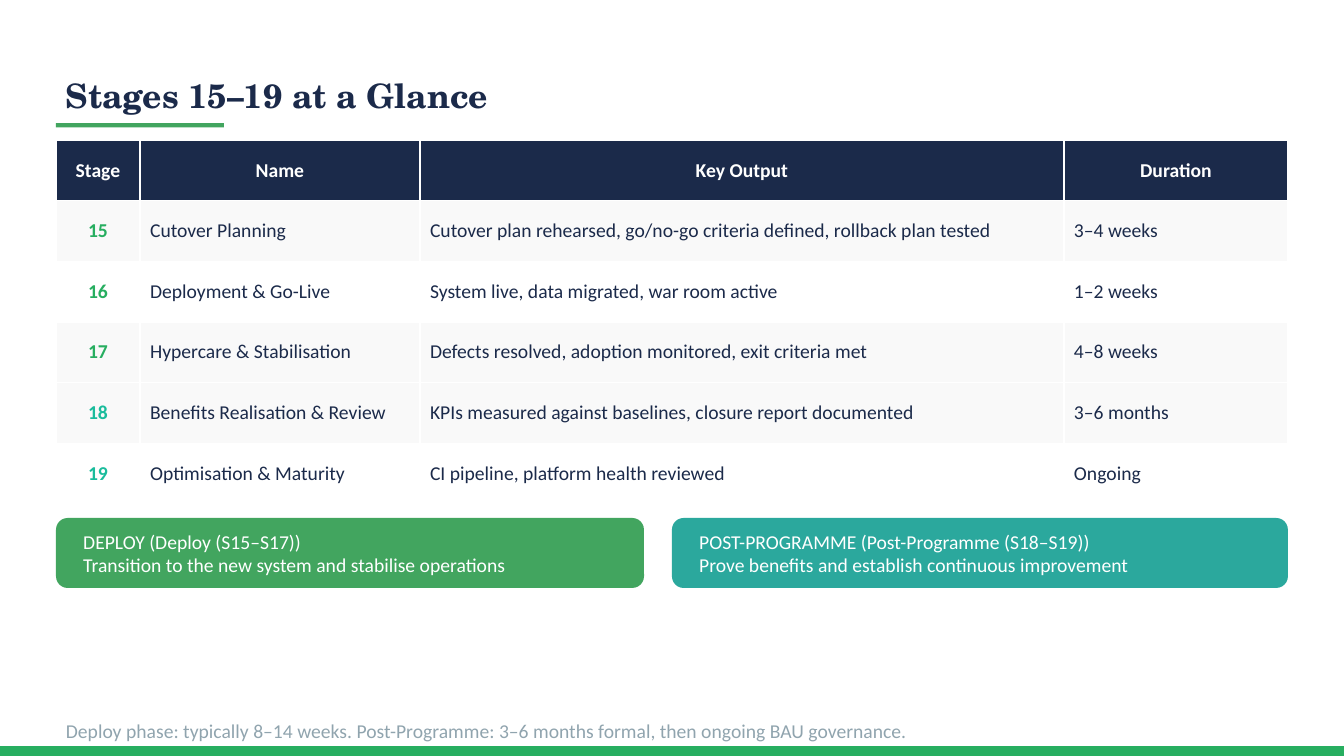
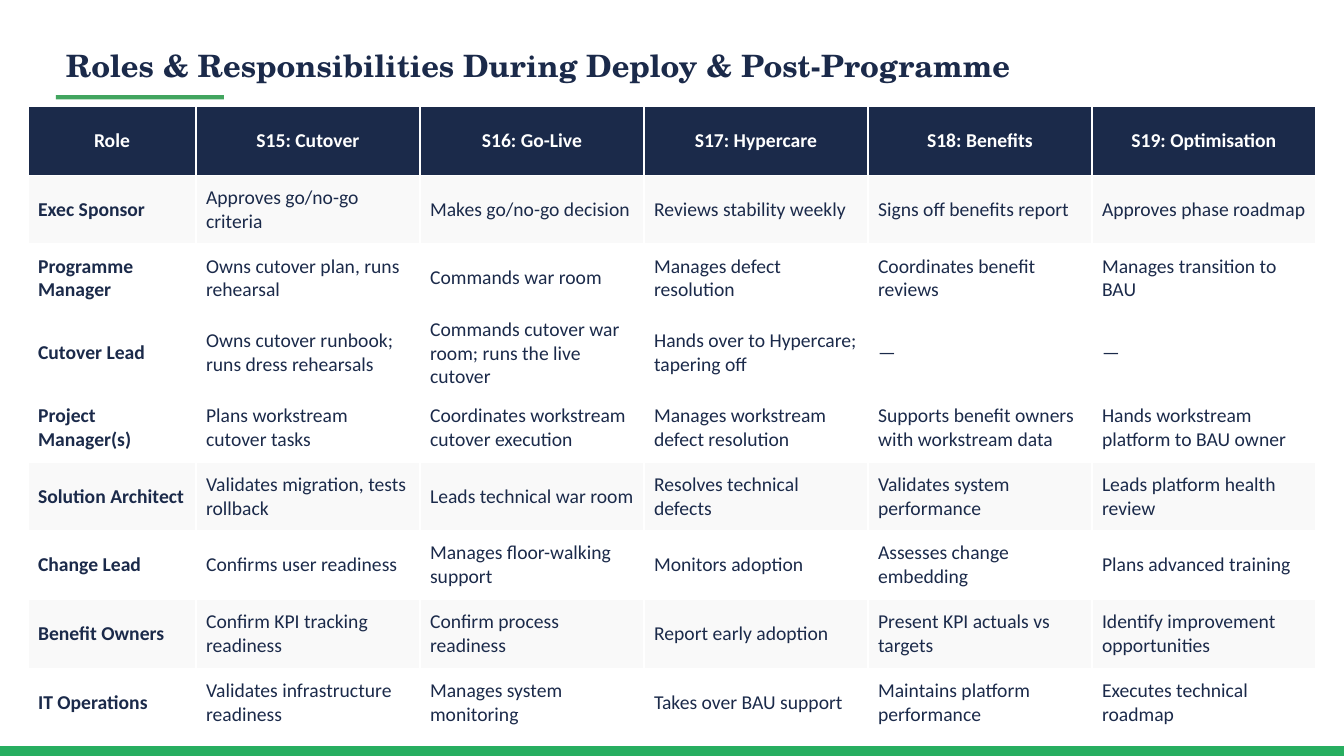
"""Build two slides on the deploy and post-programme stages."""
from pptx import Presentation
from pptx.dml.color import RGBColor
from pptx.enum.shapes import MSO_SHAPE
from pptx.enum.text import MSO_ANCHOR, MSO_AUTO_SIZE, PP_ALIGN
from pptx.util import Pt

RECTANGLE, ROUNDED = MSO_SHAPE.RECTANGLE, MSO_SHAPE.ROUNDED_RECTANGLE
MIDDLE, GROW = MSO_ANCHOR.MIDDLE, MSO_AUTO_SIZE.SHAPE_TO_FIT_TEXT
LEFT, CENTER = PP_ALIGN.LEFT, PP_ALIGN.CENTER

WIDTH, HEIGHT = 960, 540
MARGIN = 40
CONTENT_WIDTH = WIDTH - 2 * MARGIN
BAR_HEIGHT = 7
COLORS = {
    "navy": "1B2A4A", "white": "FFFFFF", "stripe": "F9F9F9", "footnote": "90A4AE",
    "bar": "27AE60", "deploy": "27AE60", "post": "1ABC9C",
    "green": "42A55F", "teal": "2BA89D",
}
TITLE_FONT = {"name": "TeX Gyre Schola", "bold": True}
BODY_FONT = {"name": "Calibri", "size": Pt(14), "bold": False}

STAGES = {
    "title": "Stages 15–19 at a Glance",
    "title_top": 50,
    "title_size": 24,
    "frame": (MARGIN, 100, 260),
    "columns": [60, 200, 460, 160],
    "striped_rows": {1, 3, 4},
    "first_colors": ["deploy"] * 3 + ["post"] * 2,
    "first_align": CENTER,
    "rows": [
        ("Stage", "Name", "Key Output", "Duration"),
        ("15", "Cutover Planning",
         "Cutover plan rehearsed, go/no-go criteria defined, rollback plan tested", "3–4 weeks"),
        ("16", "Deployment & Go-Live", "System live, data migrated, war room active", "1–2 weeks"),
        ("17", "Hypercare & Stabilisation",
         "Defects resolved, adoption monitored, exit criteria met", "4–8 weeks"),
        ("18", "Benefits Realisation & Review",
         "KPIs measured against baselines, closure report documented", "3–6 months"),
        ("19", "Optimisation & Maturity", "CI pipeline, platform health reviewed", "Ongoing"),
    ],
}
ROLES = {
    "title": "Roles & Responsibilities During Deploy & Post-Programme",
    "title_top": 30,
    "title_size": 22,
    "frame": (20, 76, 442),
    "columns": [120] + [160] * 5,
    "striped_rows": {1, 5, 7},
    "first_colors": ["navy"] * 8,
    "first_align": LEFT,
    "rows": [
        ("Role", "S15: Cutover", "S16: Go-Live", "S17: Hypercare", "S18: Benefits",
         "S19: Optimisation"),
        ("Exec Sponsor", "Approves go/no-go criteria", "Makes go/no-go decision",
         "Reviews stability weekly", "Signs off benefits report", "Approves phase roadmap"),
        ("Programme Manager", "Owns cutover plan, runs rehearsal", "Commands war room",
         "Manages defect resolution", "Coordinates benefit reviews", "Manages transition to BAU"),
        ("Cutover Lead", "Owns cutover runbook; runs dress rehearsals",
         "Commands cutover war room; runs the live cutover",
         "Hands over to Hypercare; tapering off", "—", "—"),
        ("Project Manager(s)", "Plans workstream cutover tasks",
         "Coordinates workstream cutover execution", "Manages workstream defect resolution",
         "Supports benefit owners with workstream data", "Hands workstream platform to BAU owner"),
        ("Solution Architect", "Validates migration, tests rollback", "Leads technical war room",
         "Resolves technical defects", "Validates system performance",
         "Leads platform health review"),
        ("Change Lead", "Confirms user readiness", "Manages floor-walking support",
         "Monitors adoption", "Assesses change embedding", "Plans advanced training"),
        ("Benefit Owners", "Confirm KPI tracking readiness", "Confirm process readiness",
         "Report early adoption", "Present KPI actuals vs targets",
         "Identify improvement opportunities"),
        ("IT Operations", "Validates infrastructure readiness", "Manages system monitoring",
         "Takes over BAU support", "Maintains platform performance",
         "Executes technical roadmap"),
    ],
}
PHASE_CARDS = [
    (MARGIN, 420, "green",
     "DEPLOY (Deploy (S15–S17))\nTransition to the new system and stabilise operations"),
    (480, 440, "teal",
     "POST-PROGRAMME (Post-Programme (S18–S19))\n"
     "Prove benefits and establish continuous improvement"),
]
FOOTNOTE = ("Deploy phase: typically 8–14 weeks. Post-Programme: 3–6 months formal, "
            "then ongoing BAU governance.")


def rgb(name):
    return RGBColor.from_string(COLORS[name])


def write(frame, text, color, align=LEFT, **font):
    para = frame.paragraphs[0]
    para.text = text
    para.alignment = align
    for span in para.runs:
        for key, value in font.items():
            setattr(span.font, key, value)
        span.font.color.rgb = rgb(color)


def add_block(page, kind, left, top, width, height, color):
    block = page.shapes.add_shape(kind, Pt(left), Pt(top), Pt(width), Pt(height))
    block.shadow.inherit = False
    block.fill.solid()
    block.fill.fore_color.rgb = rgb(color)
    block.line.fill.background()
    return block


def add_text(page, top, height, text, color, **font):
    box = page.shapes.add_textbox(Pt(MARGIN), Pt(top), Pt(CONTENT_WIDTH), Pt(height))
    box.text_frame.word_wrap = True
    box.text_frame.auto_size = GROW
    write(box.text_frame, text, color, **font)


def add_master_bar(deck, page):
    bar = add_block(page, RECTANGLE, 0, HEIGHT - BAR_HEIGHT, WIDTH, BAR_HEIGHT, "bar")
    bar.element.nvSpPr.cNvPr.set("id", "20")
    deck.slide_master.shapes.element.append(bar.element)


def add_grid(page, content):
    rows, columns = content["rows"], content["columns"]
    left, top, height = content["frame"]
    table = page.shapes.add_table(len(rows), len(columns), Pt(left), Pt(top),
                                  Pt(sum(columns)), Pt(height)).table
    table.horz_banding = False
    for column, width in zip(table.columns, columns):
        column.width = Pt(width)
    for row_index, row in enumerate(rows):
        table.rows[row_index].height = Pt(height / len(rows))
        for column_index, text in enumerate(row):
            fill = "stripe" if row_index in content["striped_rows"] else "white"
            color, align, bold = "navy", LEFT, False
            if row_index == 0:
                fill, color, align, bold = "navy", "white", CENTER, True
            elif column_index == 0:
                color = content["first_colors"][row_index - 1]
                align, bold = content["first_align"], True
            cell = table.cell(row_index, column_index)
            cell.vertical_anchor = MIDDLE
            cell.fill.solid()
            cell.fill.fore_color.rgb = rgb(fill)
            write(cell.text_frame, text, color, align, **{**BODY_FONT, "bold": bold})


def add_page(deck, content):
    page = deck.slides.add_slide(deck.slide_layouts[6])
    top = content["title_top"]
    add_text(page, top, 36, content["title"], "navy", size=Pt(content["title_size"]), **TITLE_FONT)
    add_block(page, RECTANGLE, MARGIN, top + 38, 120, 3, "green")
    add_grid(page, content)
    return page


def add_phase_cards(page):
    for left, width, color, text in PHASE_CARDS:
        card = add_block(page, ROUNDED, left, 370, width, 50, color)
        frame = card.text_frame
        frame.word_wrap = True
        frame.vertical_anchor = MIDDLE
        frame.margin_left = frame.margin_right = Pt(17)
        write(frame, text, "white", **BODY_FONT)


def main():
    deck = Presentation()
    deck.slide_width, deck.slide_height = Pt(WIDTH), Pt(HEIGHT)
    stages_page = add_page(deck, STAGES)
    add_master_bar(deck, stages_page)
    add_phase_cards(stages_page)
    add_text(stages_page, 510, 20, FOOTNOTE, "footnote", **BODY_FONT)
    add_page(deck, ROLES)
    deck.save("out.pptx")


if __name__ == "__main__":
    main()
